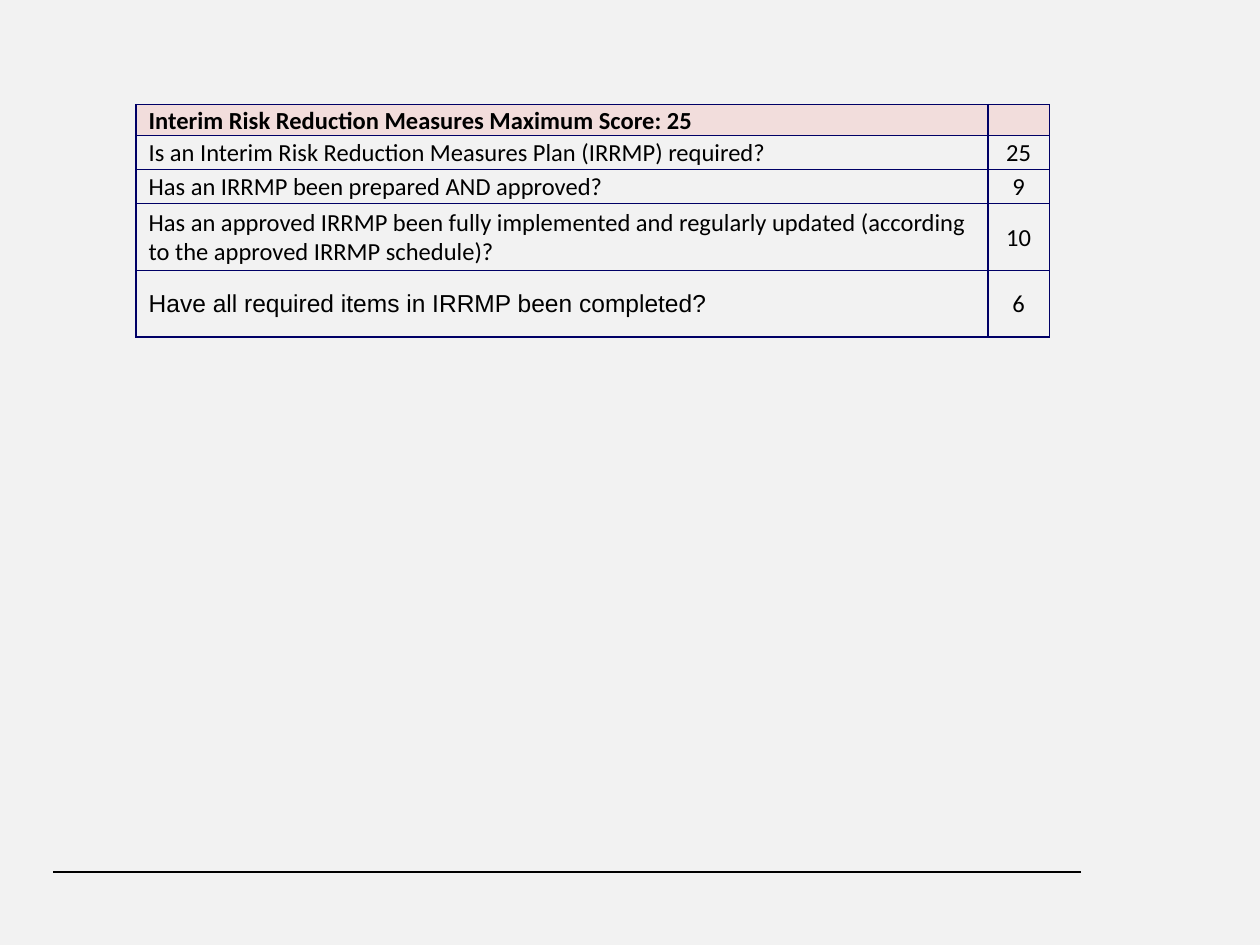
"""Build a slide with the interim risk reduction measures score table."""
from lxml import etree
from pptx import Presentation
from pptx.dml.color import RGBColor
from pptx.enum.shapes import MSO_CONNECTOR
from pptx.enum.text import MSO_ANCHOR, PP_ALIGN
from pptx.oxml.ns import qn
from pptx.util import Inches, Pt

STRAIGHT = MSO_CONNECTOR.STRAIGHT
MIDDLE = MSO_ANCHOR.MIDDLE
LEFT, CENTER = PP_ALIGN.LEFT, PP_ALIGN.CENTER

THEME = {
    "background": "F2F2F2", "header": "F2DDDC", "border": "000066", "text": "000000",
    "font": "Calibri", "last_font": "Arial", "size": 14,
    "thick": 1, "thin": 0.5, "rule": 0.75,
}
ROWS = [
    ("Interim Risk Reduction Measures Maximum Score: 25", ""),
    ("Is an Interim Risk Reduction Measures Plan (IRRMP) required?", "25"),
    ("Has an IRRMP been prepared AND approved?", "9"),
    ("Has an approved IRRMP been fully implemented and regularly updated "
     "(according to the approved IRRMP schedule)?", "10"),
    ("Have all required items in IRRMP been completed?", "6"),
]
COL_WIDTHS = [6.76, 0.49]
ROW_HEIGHTS = [0.23, 0.27, 0.27, 0.53, 0.53]
TABLE_LEFT, TABLE_TOP = 1.08, 0.83
RULE_LEFT, RULE_RIGHT, RULE_Y = 0.42, 8.58, 6.92


def color(name):
    return RGBColor.from_string(THEME[name])


def set_borders(cell, top, bottom):
    tcPr = cell._tc.get_or_add_tcPr()
    widths = {"L": "thick", "R": "thick", "T": top, "B": bottom}
    for side, weight in widths.items():
        ln = etree.SubElement(tcPr, qn(f"a:ln{side}"), w=str(Pt(THEME[weight])))
        fill = etree.SubElement(ln, qn("a:solidFill"))
        etree.SubElement(fill, qn("a:srgbClr"), val=THEME["border"])


def write_cell(cell, text, align, font):
    cell.vertical_anchor = MIDDLE
    cell.margin_left = Inches(0.1 if align == LEFT else 0.01)
    cell.margin_top = cell.margin_right = Inches(0.01)
    cell.margin_bottom = 0
    p = cell.text_frame.paragraphs[0]
    p.alignment = align
    if not text:
        etree.SubElement(p._p, qn("a:endParaRPr"), sz=str(THEME["size"] * 100))
        return
    r = p.add_run()
    r.text = text
    r.font.name = THEME[font]
    r.font.size = Pt(THEME["size"])
    r.font.color.rgb = color("text")
    return r


def add_score_table(s):
    table = s.shapes.add_table(
        len(ROWS), len(COL_WIDTHS), Inches(TABLE_LEFT), Inches(TABLE_TOP),
        Inches(sum(COL_WIDTHS)), Inches(sum(ROW_HEIGHTS))).table
    table.first_row = table.horz_banding = False
    for column, width in zip(table.columns, COL_WIDTHS):
        column.width = Inches(width)
    last = len(ROWS) - 1
    for i, (texts, height) in enumerate(zip(ROWS, ROW_HEIGHTS)):
        table.rows[i].height = Inches(height)
        for j, text in enumerate(texts):
            cell = table.cell(i, j)
            font = "last_font" if i == last and j == 0 else "font"
            r = write_cell(cell, text, CENTER if j else LEFT, font)
            under_header = j == 0
            top = "thick" if i == 0 or (i == 1 and under_header) else "thin"
            bottom = "thick" if i == last or (i == 0 and under_header) else "thin"
            set_borders(cell, top, bottom)
            if i == 0:
                cell.fill.solid()
                cell.fill.fore_color.rgb = color("header")
                if r:
                    r.font.bold = True
            else:
                cell.fill.background()


def add_footer_rule(s):
    rule = s.shapes.add_connector(
        STRAIGHT, Inches(RULE_RIGHT), Inches(RULE_Y), Inches(RULE_LEFT), Inches(RULE_Y))
    rule.line.color.rgb = color("text")
    rule.line.width = Pt(THEME["rule"])
    etree.SubElement(rule._element.spPr, qn("a:effectLst"))


def main():
    prs = Presentation()
    prs.slide_width, prs.slide_height = Inches(10), Inches(7.5)
    s = prs.slides.add_slide(prs.slide_layouts[6])
    s.background.fill.solid()
    s.background.fill.fore_color.rgb = color("background")
    add_footer_rule(s)
    add_score_table(s)
    prs.save("out.pptx")


if __name__ == "__main__":
    main()
